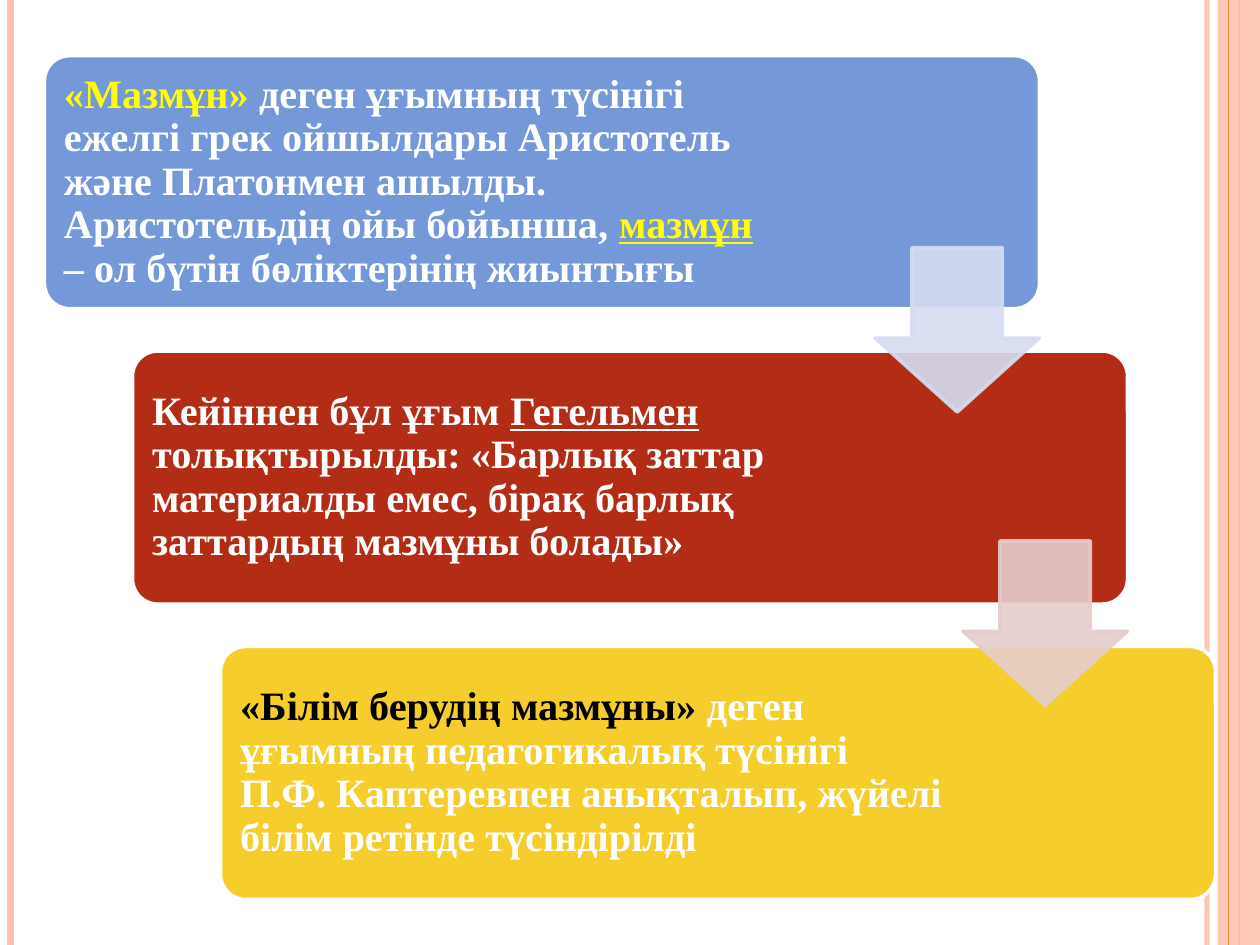
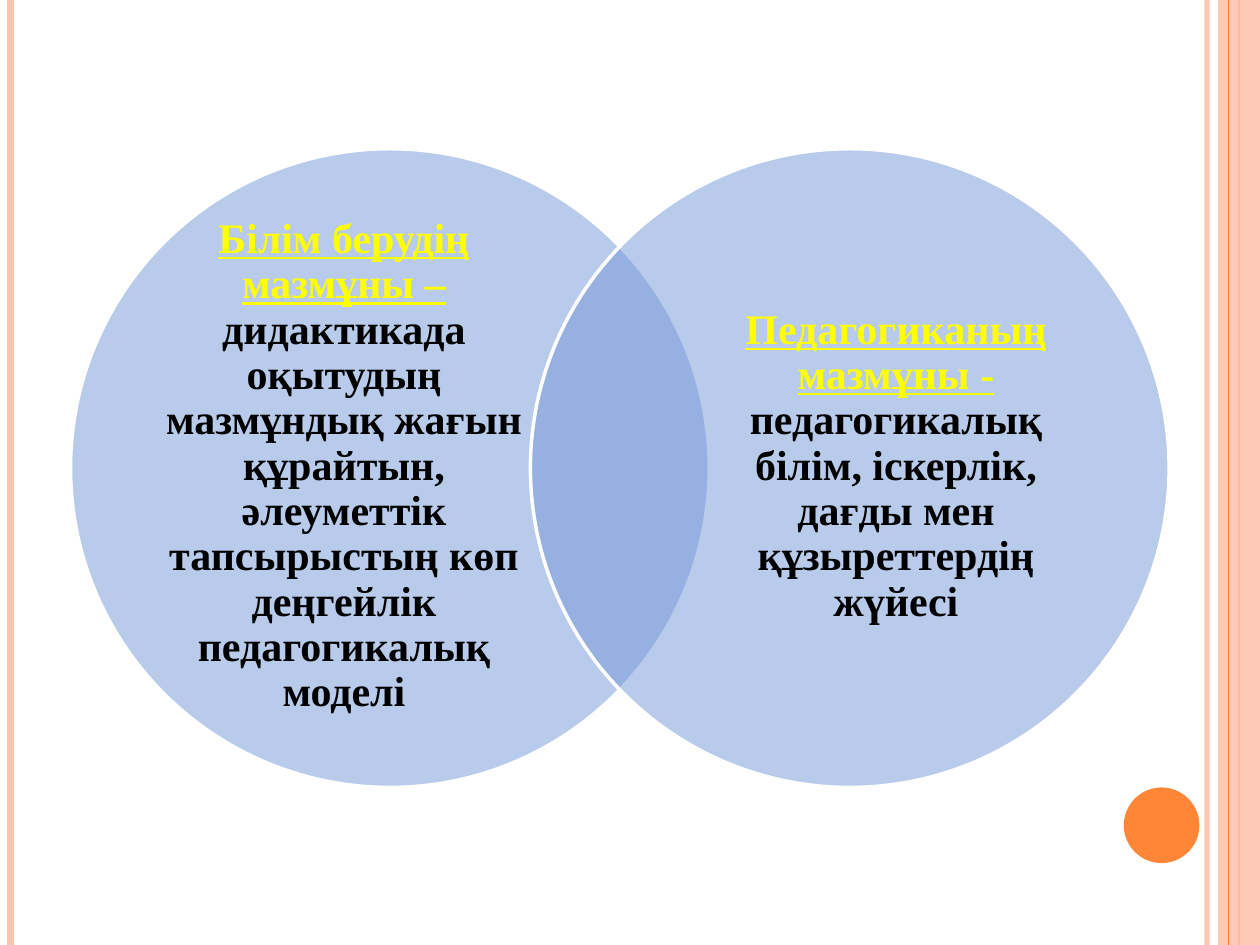
from lxml import etree
from pptx import Presentation
from pptx import util as u
from pptx.dml.color import RGBColor
from pptx.enum import shapes, text
from pptx.oxml import ns

WHITE = RGBColor(0xFF, 0xFF, 0xFF)
BLACK = RGBColor(0x00, 0x00, 0x00)
YELLOW = RGBColor(0xFF, 0xFF, 0x00)
PEACH = RGBColor(0xFE, 0xC3, 0xAE)
ORANGE = RGBColor(0xFE, 0x86, 0x37)
BLUE = RGBColor(0x75, 0x98, 0xD9)
RED = RGBColor(0xB3, 0x2C, 0x16)
GOLD = RGBColor(0xF5, 0xCD, 0x2D)
PALE_BLUE = RGBColor(0xD6, 0xDD, 0xF1)
PALE_RED = RGBColor(0xE5, 0xCD, 0xCC)

PAGE_WIDTH, PAGE_HEIGHT = 720, 540
OUTLINE = 2

STEPS = [
    (BLUE, 412.6, [
        ("«Мазмұн» ", YELLOW, False),
        ("деген ұғымның түсінігі ежелгі грек ойшылдары Аристотель және "
         "Платонмен ашылды. Аристотельдің ойы бойынша, ", WHITE, False),
        ("мазмұн ", YELLOW, True),
        ("– ол бүтін бөліктерінің жиынтығы", WHITE, False),
    ]),
    (RED, 416.2, [
        ("Кейіннен бұл ұғым ", WHITE, False),
        ("Гегельмен", WHITE, True),
        (" толықтырылды: «Барлық заттар материалды емес, бірақ барлық "
         "заттардың мазмұны болады»", WHITE, False),
    ]),
    (GOLD, 416.2, [
        ("«Білім берудің мазмұны»", BLACK, False),
        (" деген ұғымның педагогикалық түсінігі П.Ф. Каптеревпен анықталып, "
         "жүйелі білім ретінде түсіндірілді", WHITE, False),
    ]),
]
ARROW_COLORS = [PALE_BLUE, PALE_RED]

CIRCLES = [
    (40.3, 91.4, [
        ("Білім берудің мазмұны – ", YELLOW, True),
        ("дидактикада оқытудың мазмұндық жағын құрайтын, әлеуметтік "
         "тапсырыстың көп деңгейлік педагогикалық моделі", BLACK, False),
    ]),
    (303.1, 406.8, [
        ("Педагогиканың мазмұны - ", YELLOW, True),
        ("педагогикалық білім, іскерлік, дағды мен құзыреттердің жүйесі",
         BLACK, False),
    ]),
]


def set_all(target, values):
    for name, value in values.items():
        setattr(target, name, value)


def fade(shape, color, percent):
    for element in shape.element.spPr.iter(ns.qn("a:srgbClr")):
        if element.get("val") == str(color):
            alpha = etree.SubElement(element, ns.qn("a:alpha"))
            alpha.set("val", str(percent * 1000))


def add_figure(slide, kind, box, color, opacity=100, outline=None, adjustments=()):
    shape = slide.shapes.add_shape(kind, *map(u.Pt, box))
    shape.shadow.inherit = False
    for index, value in enumerate(adjustments):
        shape.adjustments[index] = value
    shape.fill.solid()
    shape.fill.fore_color.rgb = color
    if outline is None:
        shape.line.fill.background()
    else:
        shape.line.color.rgb = outline
        shape.line.width = u.Pt(OUTLINE)
    if opacity < 100:
        fade(shape, color, opacity)


def add_rule(slide, x, color, width, opacity=100):
    rule = slide.shapes.add_connector(
        shapes.MSO_CONNECTOR.STRAIGHT, u.Pt(x), 0, u.Pt(x), u.Pt(PAGE_HEIGHT))
    rule.line.color.rgb = color
    rule.line.width = u.Pt(width)
    if opacity < 100:
        fade(rule, color, opacity)
    etree.SubElement(rule.element.spPr, ns.qn("a:effectLst"))


def add_text(slide, box, runs, size, inset, alignment):
    frame = slide.shapes.add_textbox(*map(u.Pt, box)).text_frame
    margins = {f"margin_{side}": u.Pt(inset)
               for side in ("left", "top", "right", "bottom")}
    set_all(frame, {"word_wrap": True,
                    "vertical_anchor": text.MSO_ANCHOR.MIDDLE, **margins})
    paragraph = frame.paragraphs[0]
    set_all(paragraph, {"alignment": alignment, "line_spacing": 0.9})
    for words, color, underline in runs:
        run = paragraph.add_run()
        run.text = words
        set_all(run.font, {"name": "Times New Roman", "size": u.Pt(size),
                           "bold": True, "underline": underline})
        run.font.color.rgb = color


def add_framed_slide(presentation):
    slide = presentation.slides.add_slide(presentation.slide_layouts[6])
    add_rule(slide, 689.8, PEACH, 3, 93)
    add_rule(slide, 6, PEACH, 4.5)
    add_rule(slide, 708, ORANGE, 1.5)
    add_figure(slide, shapes.MSO_SHAPE.RECTANGLE,
               (696, 0, 24, PAGE_HEIGHT), PEACH, 87)
    add_rule(slide, 702, ORANGE, 0.75)
    return slide


def add_staircase(slide):
    step_x, step_y = 50.3, 168.8
    for index, (color, text_width, runs) in enumerate(STEPS):
        left, top = 25.4 + index * step_x, 31.8 + index * step_y
        add_figure(slide, shapes.MSO_SHAPE.ROUNDED_RECTANGLE,
                   (left, top, 568.6, 144.6), color, outline=WHITE,
                   adjustments=[0.1])
        add_text(slide, (left + 4.2, top + 4.2, text_width, 136.2), runs,
                 23, 7, text.PP_ALIGN.LEFT)
    for index, color in enumerate(ARROW_COLORS):
        add_figure(slide, shapes.MSO_SHAPE.DOWN_ARROW,
                   (500 + index * step_x, 141.5 + index * 167.6, 94, 94),
                   color, 90, color, [0.55, 0.45])


def add_overlap(slide):
    add_figure(slide, shapes.MSO_SHAPE.OVAL, (642.2, 450, 43.2, 43.2), ORANGE)
    for left, text_left, runs in CIRCLES:
        add_figure(slide, shapes.MSO_SHAPE.OVAL, (left, 85, 365, 365),
                   BLUE, 50, WHITE)
        add_text(slide, (text_left, 127.4, 210.4, 278.6), runs,
                 24, 0, text.PP_ALIGN.CENTER)


def main():
    presentation = Presentation()
    set_all(presentation, {"slide_width": u.Pt(PAGE_WIDTH),
                           "slide_height": u.Pt(PAGE_HEIGHT)})
    for draw in (add_staircase, add_overlap):
        draw(add_framed_slide(presentation))
    presentation.save("out.pptx")


if __name__ == "__main__":
    main()
